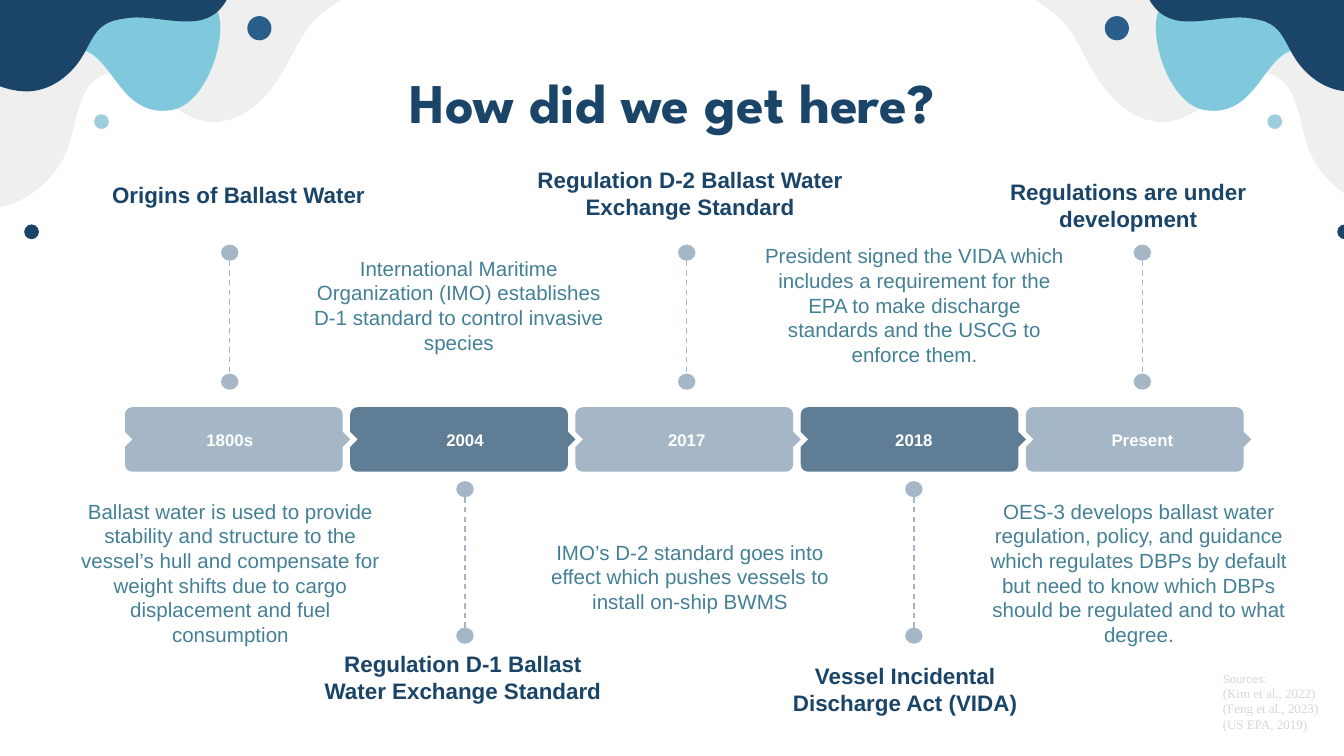
import pptx
import pptx.util
import pptx.dml.color
import pptx.enum.dml
import pptx.enum.shapes
import pptx.enum.text
import lxml.etree

RGBColor = pptx.dml.color.RGBColor
NAVY = RGBColor(0x1A, 0x45, 0x68)
BLUE = RGBColor(0x28, 0x5E, 0x89)
TEAL = RGBColor(0x80, 0xC9, 0xDD)
SKY = RGBColor(0x9D, 0xCE, 0xDF)
MIST = RGBColor(0xEF, 0xEF, 0xEF)
STEEL = RGBColor(0xA5, 0xB7, 0xC6)
SLATE = RGBColor(0x5F, 0x7D, 0x95)
BODY = RGBColor(0x43, 0x80, 0x96)
PALE = RGBColor(0xD7, 0xD7, 0xD7)
WHITE = RGBColor(0xFF, 0xFF, 0xFF)

COLS, ROWS = 100, 56.25
PITCH = 16.76
A = "{http://schemas.openxmlformats.org/drawingml/2006/main}"

BLOBS = [
    (MIST, (26.8, 1.2), [
        (28.2, 1.2, 29.3, 1.3, 29.2, 1.6), (29.1, 1.9, 27.3, 2.2, 26.9, 2.4),
        (26.1, 2.9, 25.3, 3.5, 24.6, 4.2), (23.1, 5.9, 21.8, 10.9, 18, 11.5),
        (17.8, 11.6, 17.6, 11.6, 17.4, 11.6), (14.9, 11.6, 12.6, 8.9, 11.7, 8.3),
        (11.2, 8, 10.7, 7.8, 10.2, 7.8), (9.7, 7.8, 9.2, 8, 8.8, 8.2),
        (7.1, 9.3, 7.1, 11.8, 6.4, 13.7), (5.4, 16, 3.3, 17.7, 0.9, 18),
        (1, 12.9, 0.7, 7.7, 0, 2.6), (3.2, 2, 6.5, 1.9, 9.8, 1.8),
        (23.5, 1.3), (23.8, 1.3, 25.4, 1.2, 26.8, 1.2)]),
    (TEAL, (1.5, 4.7), [
        (1.5, 5.2, 1.7, 5.7, 2.3, 6.2), (3.8, 7.2, 6, 5.6, 7.8, 6.3),
        (9.9, 7.1, 10.5, 11.2, 14.1, 10.7), (16.3, 10.4, 17.8, 6.9, 17.8, 4.5),
        (17.8, 4, 17.7, 3.6, 17.6, 3.3), (17.6, 3.1, 15, 2.6, 14.7, 2.6),
        (12, 2.4, 9.2, 2.4, 6.4, 2.6), (2.5, 3.1),
        (2.1, 3.1, 2.3, 3.1, 2, 3.4), (1.8, 3.6, 1.5, 4.1, 1.5, 4.7)]),
    (NAVY, (3.4, 9.3), [
        (1.5, 9.3, 0, 8.2, 0, 8.2), (0, 1.2), (18.8, 1.2),
        (18.1, 3.6, 16.8, 4.1, 15.3, 4.1), (14.1, 4.1, 12.8, 3.8, 11.5, 3.8),
        (11, 3.8, 10.5, 3.9, 10, 4), (7.7, 4.6, 8.4, 6.8, 5.7, 8.6),
        (4.9, 9.1, 4.1, 9.3, 3.4, 9.3)]),
]
DOTS = [(BLUE, 20.7, 4.6, 1.8), (SKY, 8.95, 11.55, 1.1), (NAVY, 3.75, 19.75, 1.1)]

ABOVE, BELOW = (18.8, 28.4), (36.4, 47.3)
MILESTONES = [
    ("1800s", 17.1, ABOVE, "Origins of Ballast Water", (4.9, 13, 25.7, 3),
     "Ballast water is used to provide stability and structure to the vessel’s hull and "
     "compensate for weight shifts due to cargo displacement and fuel consumption", (5, 38.4)),
    ("2004", 34.6, BELOW, "Regulation D-1 Ballast Water Exchange Standard",
     (22.4, 47.9, 24.1, 5.2),
     "International Maritime Organization (IMO) establishes D-1 standard to control "
     "invasive species", (22, 18.5)),
    ("2017", 51.1, ABOVE, "Regulation D-2 Ballast Water Exchange Standard",
     (38.5, 11.9, 25.7, 5.2),
     "IMO’s D-2 standard goes into effect which pushes vessels to install on-ship BWMS",
     (39.2, 38.7)),
    ("2018", 68, BELOW, "Vessel Incidental Discharge Act (VIDA)", (55.8, 48.8, 23.1, 5.2),
     "President signed the VIDA which includes a requirement for the EPA to make discharge "
     "standards and the USCG to enforce them.", (55.9, 18.5)),
    ("Present", 85, ABOVE, "Regulations are under development", (71.1, 12.8, 25.7, 5),
     "OES-3 develops ballast water regulation, policy, and guidance which regulates DBPs by "
     "default but need to know which DBPs should be regulated and to what degree.",
     (72.6, 38.4)),
]


def grid(n):
    """Turn grid units into a length."""
    return pptx.util.Inches(n / 10)


def paint(sp, color):
    """Give a shape a flat fill without line or shadow."""
    sp.shadow.inherit = False
    sp.fill.solid()
    sp.fill.fore_color.rgb = color
    sp.line.fill.background()


def add_text(s, box, text, size, color, font="Arial", bold=False, align="CENTER",
             middle=False, inset=1):
    """Add a text box with one paragraph per line of text."""
    tf = s.shapes.add_textbox(*map(grid, box)).text_frame
    tf.word_wrap = True
    tf.margin_top = tf.margin_bottom = grid(inset)
    if middle:
        tf.vertical_anchor = pptx.enum.text.MSO_ANCHOR.MIDDLE
    for i, line in enumerate(text.split("\n")):
        p = tf.paragraphs[0] if i == 0 else tf.add_paragraph()
        p.alignment = pptx.enum.text.PP_ALIGN[align]
        r = p.add_run()
        r.text = line
        r.font.name, r.font.size, r.font.bold = font, pptx.util.Pt(size), bold
        r.font.color.rgb = color
    return tf


def add_outline(s, start, steps, color, place):
    """Draw a closed outline of lines and cubic curves, mapped by place."""
    points = [start] + [step[i:i + 2] for step in steps for i in range(0, len(step), 2)]
    placed = [tuple(map(grid, place(*point))) for point in points]
    fb = s.shapes.build_freeform(*placed[0])
    fb.add_line_segments(placed[1:], close=True)
    sp = fb.convert_to_shape()
    paint(sp, color)
    segments = iter(list(sp.element.iter(A + "lnTo")))
    for step in steps:
        first, *rest = [next(segments) for _ in range(len(step) // 2)]
        if rest:
            first.tag = A + "cubicBezTo"
        for node in rest:
            first.append(node[0])
            node.getparent().remove(node)


def add_dot(s, x, y, w, h, color):
    """Draw an ellipse centred on a point."""
    box = (x - w / 2, y - h / 2, w, h)
    paint(s.shapes.add_shape(pptx.enum.shapes.MSO_SHAPE.OVAL, *map(grid, box)), color)


def add_corner(s, edge, top, direction):
    """Draw the waves and dots of a top corner, running inward from its edge."""
    def place(x, y):
        return edge + direction * x, top + y

    for color, start, steps in BLOBS:
        add_outline(s, start, steps, color, place)
    for color, x, y, size in DOTS:
        add_dot(s, *place(x, y), size, size, color)


def add_block(s, x, y, w, h, color):
    """Draw a notched timeline block whose tip meets the next block."""
    tip, r = 0.56, 0.55
    k = r * 0.45
    right, mid = w - tip, h / 2
    steps = [(right - r, 0), (right - k, 0, right, k, right, r), (right, mid - tip),
             (w, mid), (right, mid + tip), (right, h - r),
             (right, h - k, right - k, h, right - r, h), (r, h),
             (k, h, 0, h - k, 0, h - r), (0, mid + tip), (tip, mid), (0, mid - tip),
             (0, r), (0, k, k, 0, r, 0)]
    add_outline(s, (r, 0), steps, color, lambda px, py: (x + px, y + py))


def add_stem(s, x, top, bottom):
    """Draw a dashed vertical line between two dots."""
    line = s.shapes.add_connector(pptx.enum.shapes.MSO_CONNECTOR.STRAIGHT,
                                  *map(grid, (x, top + 0.6, x, bottom - 0.6)))
    line.line.color.rgb = STEEL
    line.line.width = pptx.util.Pt(0.75)
    line.line.dash_style = pptx.enum.dml.MSO_LINE.DASH
    lxml.etree.SubElement(line.element.spPr, A + "effectLst")
    for y in (top, bottom):
        add_dot(s, x, y, 1.3, 1.2, STEEL)


def add_timeline(s, x, y, h):
    """Draw the row of blocks with the stems and texts of each milestone."""
    for i, (label, stem, span, heading, box, body, corner) in enumerate(MILESTONES):
        add_block(s, x + i * PITCH, y, PITCH, h, (STEEL, SLATE)[i % 2])
        add_stem(s, stem, *span)
        add_text(s, (stem - 5.8, y + 0.2, 11.6, 4.4), label, 9, WHITE, bold=True, middle=True)
        add_text(s, (*corner, 24.3, 8.4), body, 11, BODY, middle=True)
        add_text(s, box, heading, 12, NAVY, bold=True, inset=0.5)


def add_sources(s, box):
    """List the sources under a small caption."""
    tf = add_text(s, box, "Sources:\n(Kim et al., 2022)\n(Feng et al., 2023)\n(US EPA, 2019)",
                  7, PALE, font="Times New Roman", align="LEFT", inset=0.5)
    r = tf.paragraphs[0].runs[0]
    r.font.name, r.font.size = "Arial", pptx.util.Pt(6)


def main():
    """Build the slide and save it."""
    prs = pptx.Presentation()
    prs.slide_width, prs.slide_height = grid(COLS), grid(ROWS)
    s = prs.slides.add_slide(prs.slide_layouts[6])
    add_corner(s, -1.4, -2.5, 1)
    add_corner(s, 103.8, -2.5, -1)
    add_text(s, (5.9, 4, 88.2, 6.3), "How did we get here?", 30, NAVY,
             font="League Spartan", bold=True)
    add_timeline(s, 9.3, 30.3, 4.8)
    add_sources(s, (90, 49.5, 10, 5.6))
    prs.save("out.pptx")


if __name__ == "__main__":
    main()
